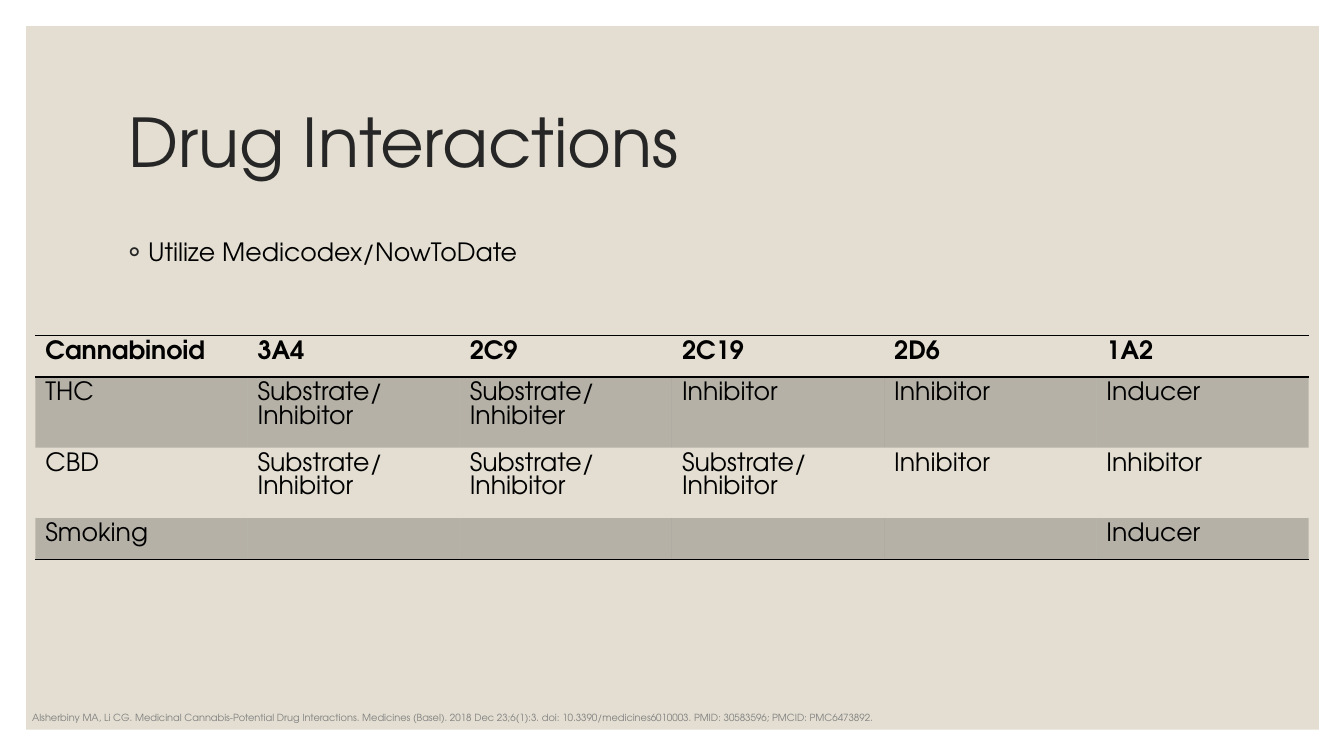
import pptx
import pptx.dml.color
import pptx.enum.shapes
import pptx.enum.text
import pptx.oxml
import pptx.oxml.ns
import pptx.util
from pptx.util import Inches

FONT = "TeX Gyre Adventor"
BEIGE = pptx.dml.color.RGBColor(0xE3, 0xDE, 0xD1)
BLACK = pptx.dml.color.RGBColor(0, 0, 0)
CHARCOAL = pptx.dml.color.RGBColor(0x26, 0x26, 0x26)
GREY = pptx.dml.color.RGBColor(0x80, 0x80, 0x80)
NS = pptx.oxml.ns.nsdecls("a")
PLAIN_TABLE_STYLE = "{2D5ABB26-0587-4C30-8999-92F81FD0307C}"


def write(frame, text, size, color, bold=False):
    frame.text = text
    frame.word_wrap = True
    paragraph = frame.paragraphs[0]
    paragraph.alignment = pptx.enum.text.PP_ALIGN.LEFT
    for run in paragraph.runs:
        run.font.name = FONT
        run.font.size = pptx.util.Pt(size)
        run.font.color.rgb = color
        run.font.bold = bold
    return paragraph


deck = pptx.Presentation()
deck.slide_width = Inches(13.33)
deck.slide_height = Inches(7.5)
slide = deck.slides.add_slide(deck.slide_layouts[5])

# Beige panel, behind the title
panel = slide.shapes.add_shape(
    pptx.enum.shapes.MSO_SHAPE.RECTANGLE,
    Inches(0.26), Inches(0.26), Inches(12.82), Inches(6.98))
panel.shadow.inherit = False
panel.fill.solid()
panel.fill.fore_color.rgb = BEIGE
panel.line.fill.background()
title = slide.shapes.title
title.element.addprevious(panel.element)

# Title
title.left, title.top = Inches(1.17), Inches(0.7)
title.width, title.height = Inches(11), Inches(1.5)
title.text_frame.vertical_anchor = pptx.enum.text.MSO_ANCHOR.MIDDLE
heading = write(title.text_frame, "Drug Interactions", 48, CHARCOAL)
heading.line_spacing = 0.9

# Bulleted advice
advice = slide.shapes.add_textbox(Inches(1.17), Inches(2.3), Inches(11), Inches(4.3))
bullet = write(advice.text_frame, "Utilize Medicodex/NowToDate", 18, BLACK)
bullet.space_before = pptx.util.Pt(9)
bullet_properties = bullet._p.get_or_add_pPr()
bullet_properties.set("marL", str(Inches(0.2)))
bullet_properties.set("indent", str(Inches(-0.2)))
for markup in (f'<a:buClr {NS}><a:srgbClr val="{CHARCOAL}"/></a:buClr>',
               f'<a:buFont {NS} typeface="{FONT}"/>',
               f'<a:buChar {NS} char="◦"/>'):
    bullet_properties.append(pptx.oxml.parse_xml(markup))

# Interaction table
interactions = [
    ["Cannabinoid", "3A4", "2C9", "2C19", "2D6", "1A2"],
    ["THC", "Substrate/ Inhibitor", "Substrate/ Inhibiter",
     "Inhibitor", "Inhibitor", "Inducer"],
    ["CBD", "Substrate/ Inhibitor", "Substrate/ Inhibitor",
     "Substrate/ Inhibitor", "Inhibitor", "Inhibitor"],
    ["Smoking", "", "", "", "", "Inducer"],
]
row_borders = {0: ["lnT", "lnB"], 3: ["lnB"]}
table_frame = slide.shapes.add_table(
    4, 6, Inches(0.35), Inches(3.33), Inches(12.63), Inches(1.64))
table = table_frame.table
table._tbl.tblPr.find(pptx.oxml.ns.qn("a:tableStyleId")).text = PLAIN_TABLE_STYLE
for r, entries in enumerate(interactions):
    table.rows[r].height = Inches(0.41)
    for c, entry in enumerate(entries):
        cell = table.cell(r, c)
        write(cell.text_frame, entry, 18, BLACK, bold=r == 0)
        cell_properties = cell._tc.get_or_add_tcPr()
        for side in row_borders.get(r, []):
            cell_properties.append(pptx.oxml.parse_xml(
                f'<a:{side} {NS} w="12700"><a:solidFill>'
                f'<a:srgbClr val="{BLACK}"/></a:solidFill></a:{side}>'))
        if r % 2:
            # Odd rows are shaded with 20 % black
            cell.fill.solid()
            cell.fill.fore_color.rgb = BLACK
            shade = cell_properties.find(
                pptx.oxml.ns.qn("a:solidFill")).find(pptx.oxml.ns.qn("a:srgbClr"))
            shade.append(pptx.oxml.parse_xml(f'<a:alpha {NS} val="20000"/>'))
        else:
            cell.fill.background()

# Citation
citation = slide.shapes.add_textbox(Inches(0.22), Inches(7.01), Inches(12.76), Inches(0.22))
write(citation.text_frame,
      "Alsherbiny MA, Li CG. Medicinal Cannabis-Potential Drug Interactions. "
      "Medicines (Basel). 2018 Dec 23;6(1):3. doi: 10.3390/medicines6010003. "
      "PMID: 30583596; PMCID: PMC6473892.", 7, GREY)

deck.save("out.pptx")
